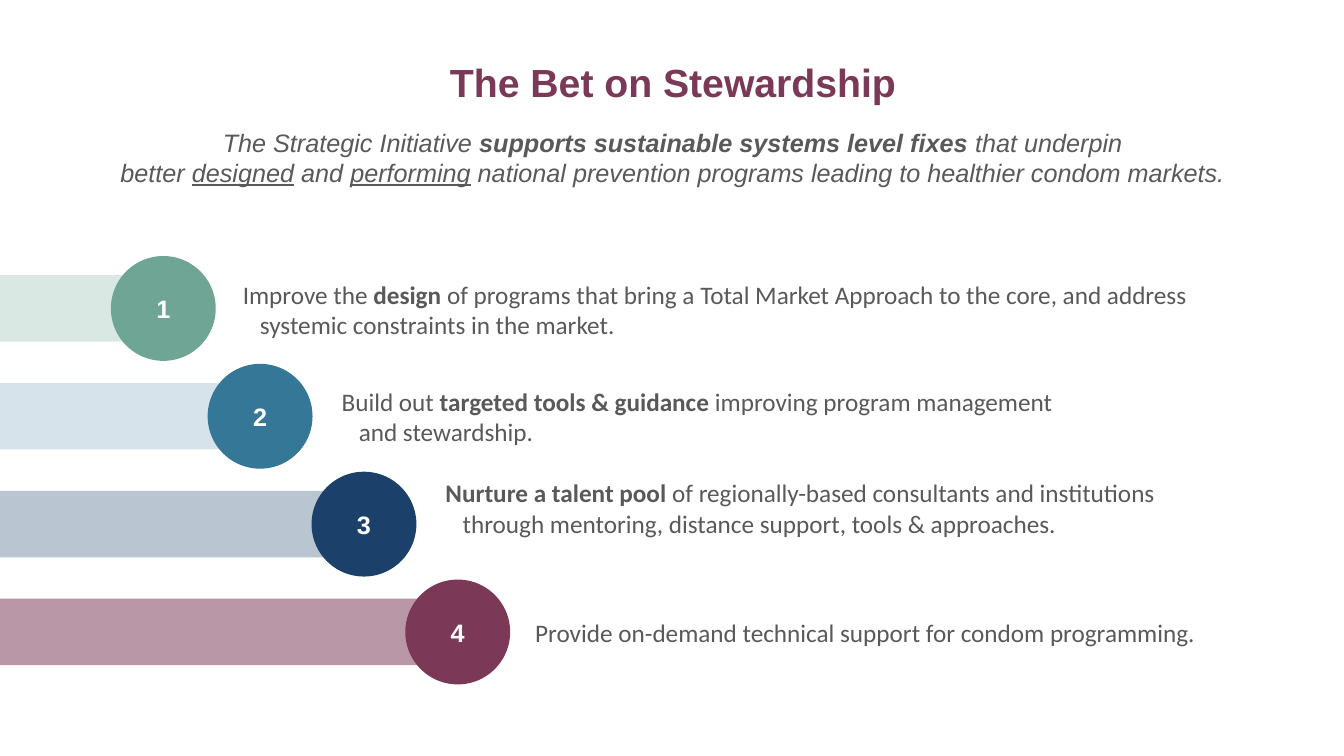
from lxml import etree
from pptx import Presentation
from pptx.dml.color import RGBColor
from pptx.enum.shapes import MSO_SHAPE
from pptx.enum.text import MSO_ANCHOR, PP_ALIGN
from pptx.oxml.ns import qn
from pptx.util import Pt

PX = 9144  # EMU, 100 px to the inch
CENTER, LEFT = PP_ALIGN.CENTER, PP_ALIGN.LEFT
TOP, MIDDLE = MSO_ANCHOR.TOP, MSO_ANCHOR.MIDDLE
RECTANGLE, OVAL = MSO_SHAPE.RECTANGLE, MSO_SHAPE.OVAL

COLORS = {
    "green": "6EA594",
    "blue": "357796",
    "navy": "1B416B",
    "plum": "7B3857",
    "gray": "595959",
    "white": "FFFFFF",
}

presentation = Presentation()
presentation.slide_width = 1333 * PX
presentation.slide_height = 750 * PX
slide = presentation.slides.add_slide(presentation.slide_layouts[6])


def write_text(shape, lines, font="Arial", size=18, color="gray", bold=False,
               italic=False, align=LEFT, anchor=TOP, wrap=True, spacing=None, hanging=0):
    """Fill one paragraph; each line is a list of (text, marks), marks holding b or u."""
    frame = shape.text_frame
    frame.word_wrap = wrap
    frame.vertical_anchor = anchor
    paragraph = frame.paragraphs[0]
    paragraph.alignment = align
    paragraph.line_spacing = spacing
    if hanging:
        properties = paragraph._p.get_or_add_pPr()
        properties.set("marL", str(hanging * PX))
        properties.set("indent", str(-hanging * PX))
    for number, line in enumerate(lines):
        if number:
            paragraph.add_line_break()
        for text, marks in line:
            run = paragraph.add_run()
            run.text = text
            run.font.name = font
            run.font.size = Pt(size)
            run.font.bold = bold or "b" in marks
            run.font.italic = italic
            run.font.underline = "u" in marks
            run.font.color.rgb = RGBColor.from_string(COLORS[color])


def add_filled_shape(kind, left, top, width, height, color, opacity=100):
    shape = slide.shapes.add_shape(kind, left * PX, top * PX, width * PX, height * PX)
    shape.shadow.inherit = False
    shape.line.fill.background()
    shape.fill.solid()
    shape.fill.fore_color.rgb = RGBColor.from_string(COLORS[color])
    if opacity < 100:
        color_element = shape._element.spPr.find(qn("a:solidFill"))[0]
        etree.SubElement(color_element, qn("a:alpha")).set("val", str(opacity * 1000))
    return shape


title = slide.shapes.add_textbox(291 * PX, 58 * PX, 753 * PX, 57 * PX)
write_text(title, [[("The Bet on Stewardship", "")]], size=28, color="plum",
           bold=True, align=CENTER, spacing=0.9)

subtitle = slide.shapes.add_textbox(92 * PX, 121 * PX, 1150 * PX, 71 * PX)
write_text(subtitle, [
    [("The Strategic Initiative ", ""), ("supports sustainable systems level fixes", "b"),
     (" that underpin", "")],
    [("better ", ""), ("designed", "u"), (" and ", ""), ("performing", "u"),
     (" national prevention programs leading to healthier condom markets.", "")],
], italic=True, align=CENTER)

# color, bar opacity, bar width, label (left, top, width, height), label lines
STEPS = [
    ("green", 25, 162, (231, 272, 1034, 71), [
        [("Improve the ", ""), ("design", "b"),
         (" of programs that bring a Total Market Approach to the core, and address", "")],
        [("systemic constraints in the market.", "")]]),
    ("blue", 20, 258, (329, 378, 953, 71), [
        [("Build out ", ""), ("targeted tools & guidance", "b"),
         (" improving program management", "")],
        [("and stewardship.", "")]]),
    ("navy", 30, 361, (432, 469, 901, 71), [
        [("Nurture a talent pool", "b"),
         (" of regionally-based consultants and institutions", "")],
        [("through mentoring, distance support, tools & approaches.", "")]]),
    ("plum", 52, 454, (521, 608, 733, 40), [
        [("Provide on-demand technical support for condom programming.", "")]]),
]
FIRST_BAR_TOP, BAR_PITCH, BAR_HEIGHT, CIRCLE = 273, 107, 66, 104

for index, (color, opacity, bar_width, label_box, lines) in enumerate(STEPS):
    bar_top = FIRST_BAR_TOP + index * BAR_PITCH
    add_filled_shape(RECTANGLE, 0, bar_top, bar_width, BAR_HEIGHT, color, opacity)
    circle = add_filled_shape(OVAL, bar_width - CIRCLE // 2,
                              bar_top + (BAR_HEIGHT - CIRCLE) // 2, CIRCLE, CIRCLE, color)
    write_text(circle, [[(str(index + 1), "")]], color="white", bold=True,
               align=CENTER, anchor=MIDDLE, wrap=False)
    label = slide.shapes.add_textbox(*(length * PX for length in label_box))
    write_text(label, lines, font="Calibri", hanging=17 if len(lines) > 1 else 0)

presentation.save("out.pptx")
